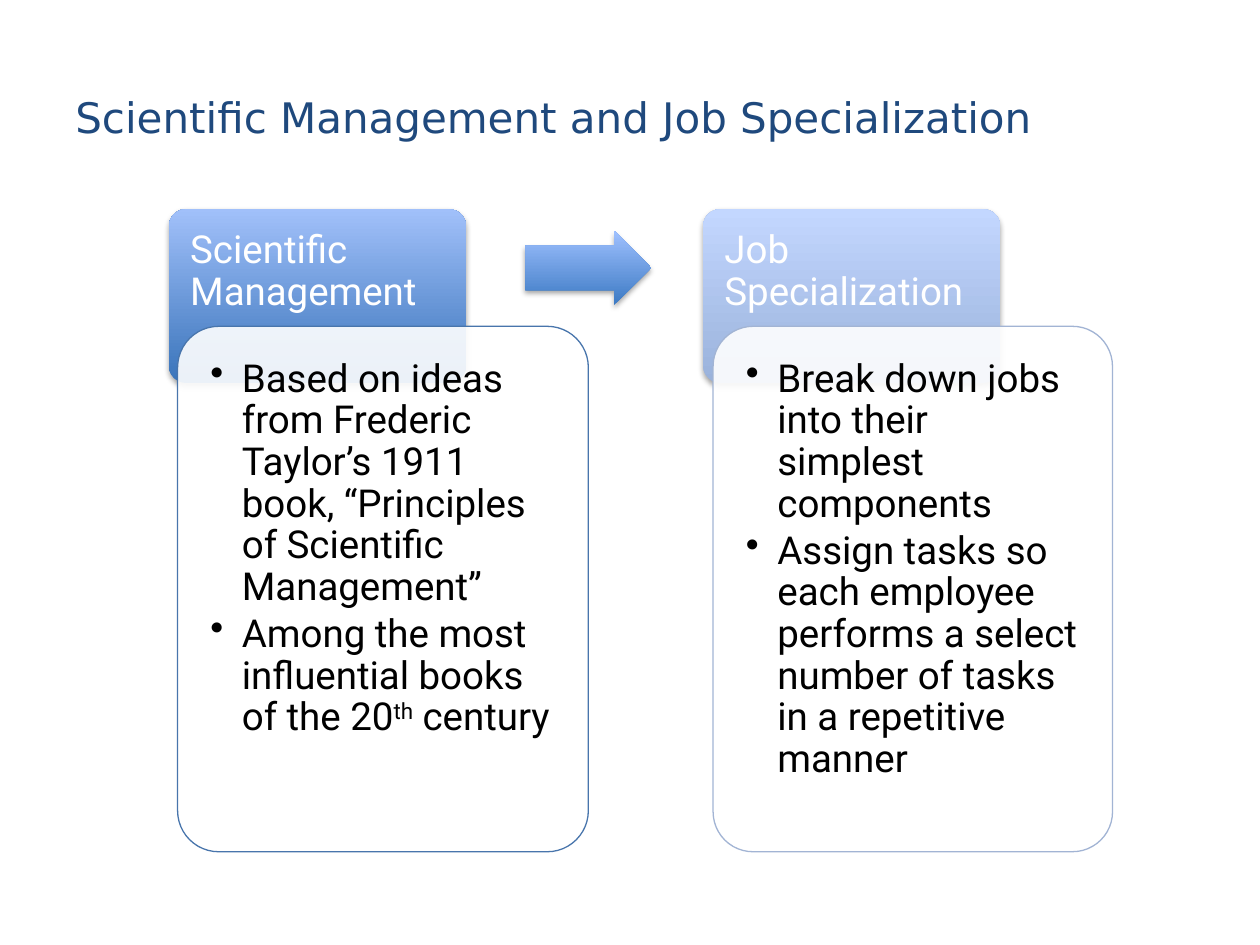
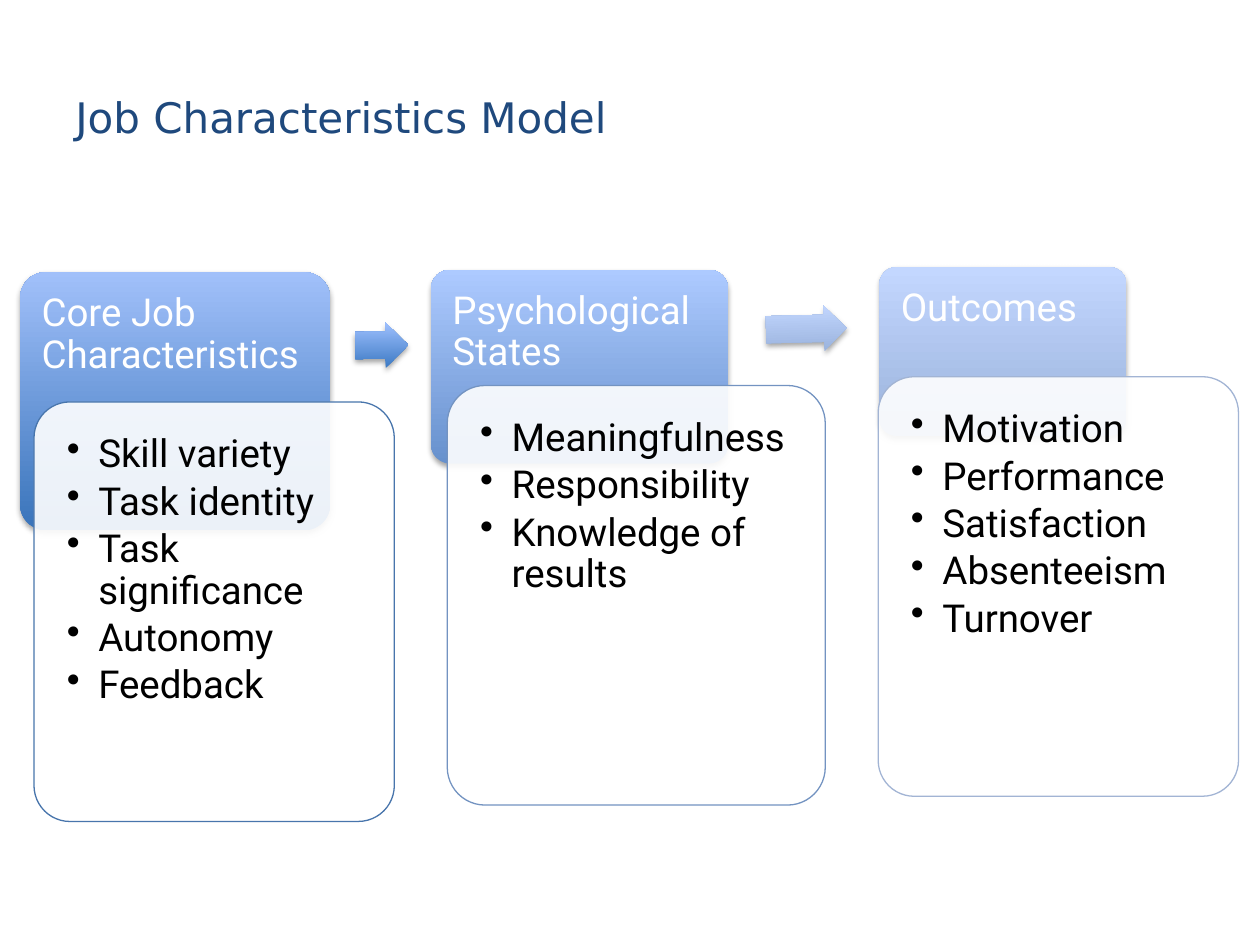
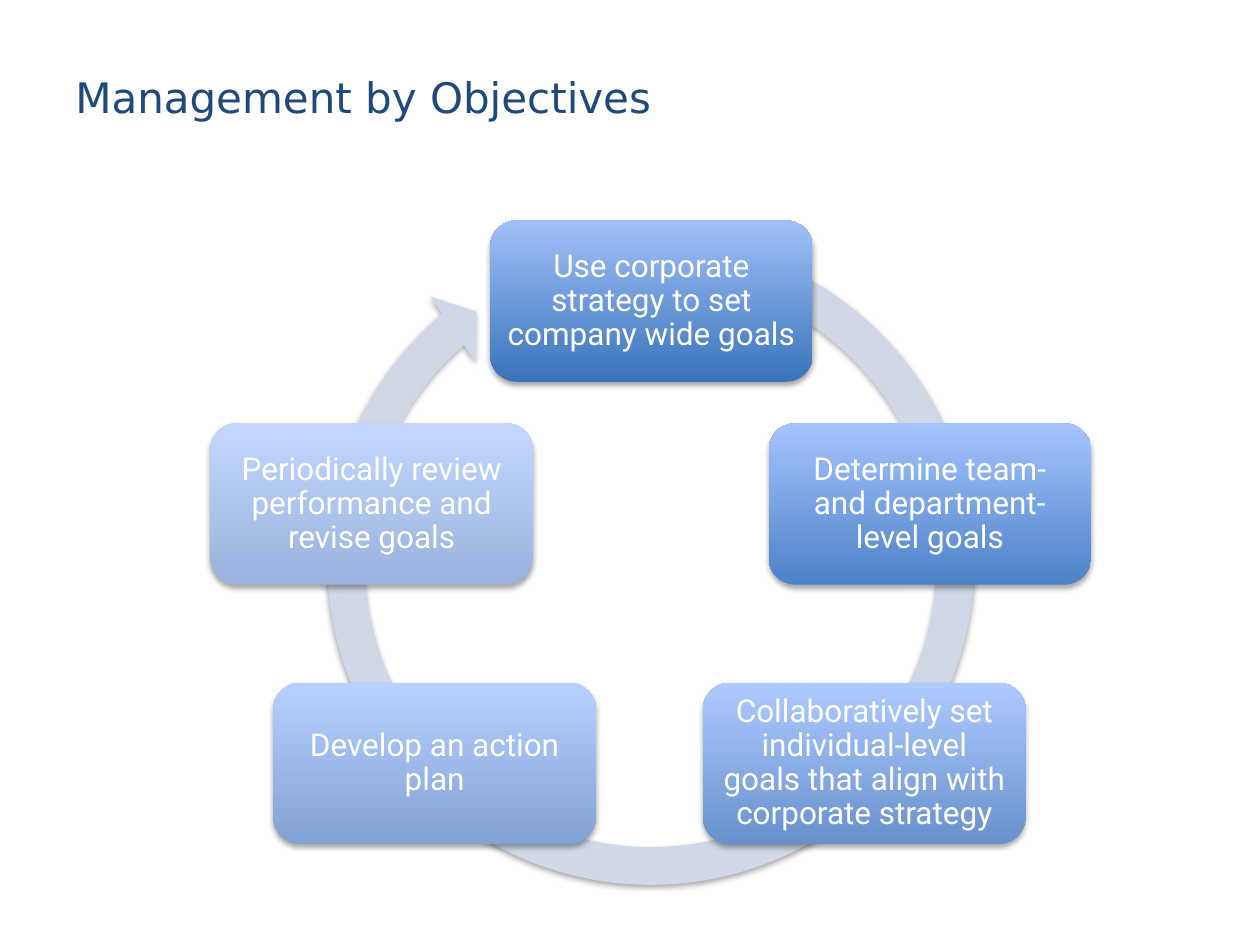
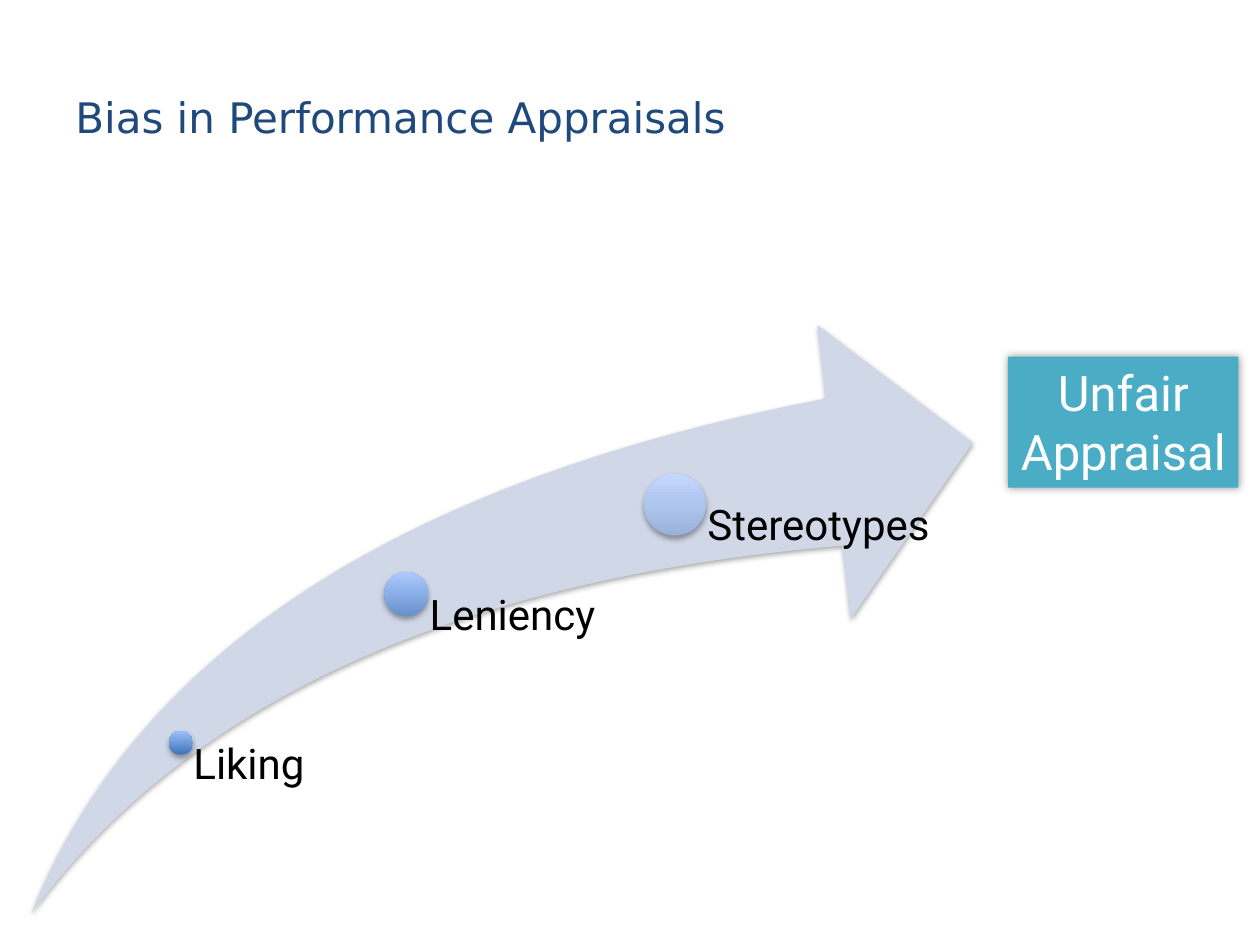
from lxml.etree import SubElement
from pptx import Presentation
from pptx.dml.color import RGBColor
from pptx.enum.shapes import MSO_SHAPE as SHAPE
from pptx.enum.text import MSO_ANCHOR as ANCHOR, PP_ALIGN as ALIGN
from pptx.oxml.ns import qn
from pptx.util import Inches, Pt

WHITE = RGBColor(0xFF, 0xFF, 0xFF)
BLACK = RGBColor(0x00, 0x00, 0x00)
NAVY = RGBColor(0x1F, 0x49, 0x7D)
PALE = RGBColor(0xD0, 0xD8, 0xE8)
TEAL = RGBColor(0x4B, 0xAC, 0xC6)

# Gradients run from the bottom colour to the top colour.
DEEP = [RGBColor(0x39, 0x74, 0xBA), RGBColor(0xA1, 0xC0, 0xFA)]
STRONG = [RGBColor(0x4D, 0x82, 0xC7), RGBColor(0xA5, 0xC4, 0xFF)]
MEDIUM = [RGBColor(0x67, 0x91, 0xCD), RGBColor(0xAD, 0xCA, 0xFF)]
SOFT = [RGBColor(0x81, 0xA2, 0xD4), RGBColor(0xB7, 0xD0, 0xFF)]
LIGHT = [RGBColor(0x9A, 0xB2, 0xDB), RGBColor(0xC3, 0xD7, 0xFF)]
ARROW_DEEP = [RGBColor(0x3C, 0x7A, 0xC4), RGBColor(0xA0, 0xC1, 0xFF)]
ARROW_LIGHT = [RGBColor(0x99, 0xB2, 0xDC), RGBColor(0xC3, 0xD7, 0xFF)]
DEEP_EDGE = RGBColor(0x48, 0x75, 0xAC)
MEDIUM_EDGE = RGBColor(0x73, 0x93, 0xC1)
LIGHT_EDGE = RGBColor(0xA2, 0xB4, 0xD4)

DROP_SHADOW = {"blur": 3.1, "distance": 1.8, "angle": 90, "opacity": 35}
GLOW_SHADOW = {"blur": 5, "distance": 0, "angle": 0, "opacity": 40}


def add_block(slide, kind, box, fill, adjustments=(), shadow=DROP_SHADOW):
    """Add an unlined shape; fill is a colour or a [bottom, top] gradient."""
    shape = slide.shapes.add_shape(kind, *map(Inches, box))
    for index, value in enumerate(adjustments):
        shape.adjustments[index] = value
    if isinstance(fill, RGBColor):
        shape.fill.solid()
        shape.fill.fore_color.rgb = fill
    else:
        shape.fill.gradient()
        shape.fill.gradient_angle = 90
        for stop, color in zip(shape.fill.gradient_stops, fill):
            stop.color.rgb = color
    shape.line.fill.background()
    shape.shadow.inherit = False
    if shadow:
        effects = shape._element.spPr.find(qn("a:effectLst"))
        outer = SubElement(effects, qn("a:outerShdw"), {
            "blurRad": str(Pt(shadow["blur"])), "dist": str(Pt(shadow["distance"])),
            "dir": str(shadow["angle"] * 60000), "rotWithShape": "0"})
        black = SubElement(outer, qn("a:srgbClr"), val="000000")
        SubElement(black, qn("a:alpha"), val=str(shadow["opacity"] * 1000))
    return shape


def write_text(shape, paragraphs, size, color, insets=(0.1, 0.05, 0.1, 0.05), font="Roboto",
               align=ALIGN.LEFT, anchor=ANCHOR.TOP, spacing=0.9, bullets=False):
    """Fill a shape with paragraphs; text between ^ marks is superscript."""
    frame = shape.text_frame
    frame.word_wrap = True
    frame.vertical_anchor = anchor
    for side, inset in zip(("left", "top", "right", "bottom"), insets):
        setattr(frame, f"margin_{side}", Inches(inset))
    for index, text in enumerate(paragraphs):
        paragraph = frame.paragraphs[0] if index == 0 else frame.add_paragraph()
        if bullets:
            properties = paragraph._p.get_or_add_pPr()
            properties.set("marL", str(Inches(0.25)))
            properties.set("indent", str(Inches(-0.25)))
            SubElement(properties, qn("a:buChar"), char="•")
            paragraph.space_after = Pt(0.15 * size)
        paragraph.alignment = align
        paragraph.line_spacing = spacing
        for position, part in enumerate(text.split("^")):
            run = paragraph.add_run()
            run.text = part
            for name, value in {"name": font, "size": Pt(size)}.items():
                setattr(run.font, name, value)
            run.font.color.rgb = color
            if position % 2:
                run.font._element.set("baseline", "30000")


presentation = Presentation()
presentation.slide_width = Inches(10)
presentation.slide_height = Inches(7.5)

slides = []
for title, top in [
    ("Scientific Management and Job Specialization", 0.3),
    ("Job Characteristics Model", 0.3),
    ("Management by Objectives", 0.14),
    ("Bias in Performance Appraisals", 0.3),
]:
    slide = presentation.slides.add_slide(presentation.slide_layouts[6])
    title_box = slide.shapes.add_textbox(Inches(0.5), Inches(top), Inches(9), Inches(1.25))
    write_text(title_box, [title], 24, NAVY, font="DejaVu Sans", anchor=ANCHOR.MIDDLE, spacing=1)
    slides.append(slide)
specialization, characteristics, objectives, bias = slides

# Slides 1 and 2: heading cards, each overlapped by a translucent bullet panel
cards = [
    (specialization, "Scientific Management", (1.34, 1.66, 2.36, 1.38), DEEP,
     (1.41, 2.59, 3.26, 4.17), DEEP_EDGE,
     ["Based on ideas from Frederic Taylor’s 1911 book, “Principles of Scientific Management”",
      "Among the most influential books of the 20^th^ century"]),
    (specialization, "Job Specialization", (5.58, 1.66, 2.36, 1.38), LIGHT,
     (5.66, 2.59, 3.17, 4.17), LIGHT_EDGE,
     ["Break down jobs into their simplest components",
      "Assign tasks so each employee performs a select number of tasks in a repetitive manner"]),
    (characteristics, "Core Job Characteristics", (0.16, 2.16, 2.46, 2.05), DEEP,
     (0.27, 3.19, 2.86, 3.33), DEEP_EDGE,
     ["Skill variety", "Task identity", "Task significance", "Autonomy", "Feedback"]),
    (characteristics, "Psychological States", (3.42, 2.14, 2.36, 1.54), MEDIUM,
     (3.55, 3.06, 3, 3.33), MEDIUM_EDGE,
     ["Meaningfulness", "Responsibility", "Knowledge of results"]),
    (characteristics, "Outcomes", (6.98, 2.12, 1.96, 1.34), LIGHT,
     (6.97, 2.99, 2.86, 3.33), LIGHT_EDGE,
     ["Motivation", "Performance", "Satisfaction", "Absenteeism", "Turnover"]),
]
PANEL_INSET = 0.09
for slide, heading, heading_box, gradient, panel_box, edge, points in cards:
    add_block(slide, SHAPE.ROUNDED_RECTANGLE, heading_box, gradient, [0.1])
    left, top, width, height = heading_box
    heading_text = slide.shapes.add_textbox(*map(Inches, (left, top, width, height * 2 / 3)))
    write_text(heading_text, [heading], 22, WHITE, (0.17, 0.17, 0.17, 0.09))

    panel = add_block(slide, SHAPE.ROUNDED_RECTANGLE, panel_box, WHITE, [0.1], shadow=None)
    panel_color = panel._element.spPr.find(qn("a:solidFill"))[0]
    SubElement(panel_color, qn("a:alpha"), val="90000")
    panel.line.color.rgb = edge
    panel.line.width = Pt(0.75)
    left, top, width, height = panel_box
    points_text = slide.shapes.add_textbox(*map(Inches, (
        left + PANEL_INSET, top + PANEL_INSET, width - 2 * PANEL_INSET, height - 2 * PANEL_INSET)))
    write_text(points_text, points, 22, BLACK, [0.17] * 4, bullets=True)

for slide, box, gradient, rotation in [
    (specialization, (4.17, 1.83, 1, 0.59), ARROW_DEEP, 0),
    (characteristics, (2.82, 2.56, 0.42, 0.36), ARROW_DEEP, 359.4),
    (characteristics, (6.08, 2.43, 0.64, 0.36), ARROW_LIGHT, 358.6),
]:
    arrow = add_block(slide, SHAPE.RIGHT_ARROW, box, gradient, [0.6, 0.5])
    arrow.rotation = rotation

# Slide 3: cycle of steps on a circular arrow
ring_percentages = [5.5, 330.7, 13774, 17387.2, 5.8]
add_block(objectives, SHAPE.CIRCULAR_ARROW, (2.43, 1.72, 5.47, 5.47), PALE,
          [percentage / 100 for percentage in ring_percentages])
STEP_WIDTH, STEP_HEIGHT, STEP_INSET = 2.56, 1.28, 0.06
for step, left, top, gradient in [
    ("Use corporate strategy to set company wide goals", 3.89, 1.75, DEEP),
    ("Determine team- and department-level goals", 6.1, 3.36, STRONG),
    ("Collaboratively set individual-level goals that align with corporate strategy",
     5.58, 5.42, MEDIUM),
    ("Develop an action plan", 2.17, 5.42, SOFT),
    ("Periodically review performance and revise goals", 1.67, 3.36, LIGHT),
]:
    add_block(objectives, SHAPE.ROUNDED_RECTANGLE, (left, top, STEP_WIDTH, STEP_HEIGHT), gradient)
    step_text = objectives.shapes.add_textbox(*map(Inches, (
        left + STEP_INSET, top + STEP_INSET,
        STEP_WIDTH - 2 * STEP_INSET, STEP_HEIGHT - 2 * STEP_INSET)))
    write_text(step_text, [step], 18, WHITE, [0.07] * 4, align=ALIGN.CENTER, anchor=ANCHOR.MIDDLE)

# Slide 4: growing dots along a swoosh, each label starting at its dot's centre
SWOOSH_BOTTOM = 7.25
add_block(bias, SHAPE.SWOOSH_ARROW, (0.25, 2.58, 7.47, 4.67), PALE, [0.25, 0.25])
for label, left, top, diameter, label_width, gradient in [
    ("Liking", 1.34, 5.8, 0.19, 1.74, DEEP),
    ("Leniency", 3.05, 4.54, 0.35, 1.79, MEDIUM),
    ("Stereotypes", 5.11, 3.76, 0.49, 2.16, LIGHT),
]:
    add_block(bias, SHAPE.OVAL, (left, top, diameter, diameter), gradient)
    center_x, center_y = left + diameter / 2, top + diameter / 2
    label_text = bias.shapes.add_textbox(*map(Inches, (
        center_x, center_y, label_width, SWOOSH_BOTTOM - center_y)))
    write_text(label_text, [label], 24, BLACK, (0.53 * diameter, 0, 0, 0))

outcome = add_block(bias, SHAPE.RECTANGLE, (8, 2.83, 1.83, 1.04), TEAL, shadow=GLOW_SHADOW)
write_text(outcome, ["Unfair Appraisal"], 28, WHITE, align=ALIGN.CENTER, spacing=1)

presentation.save("out.pptx")
